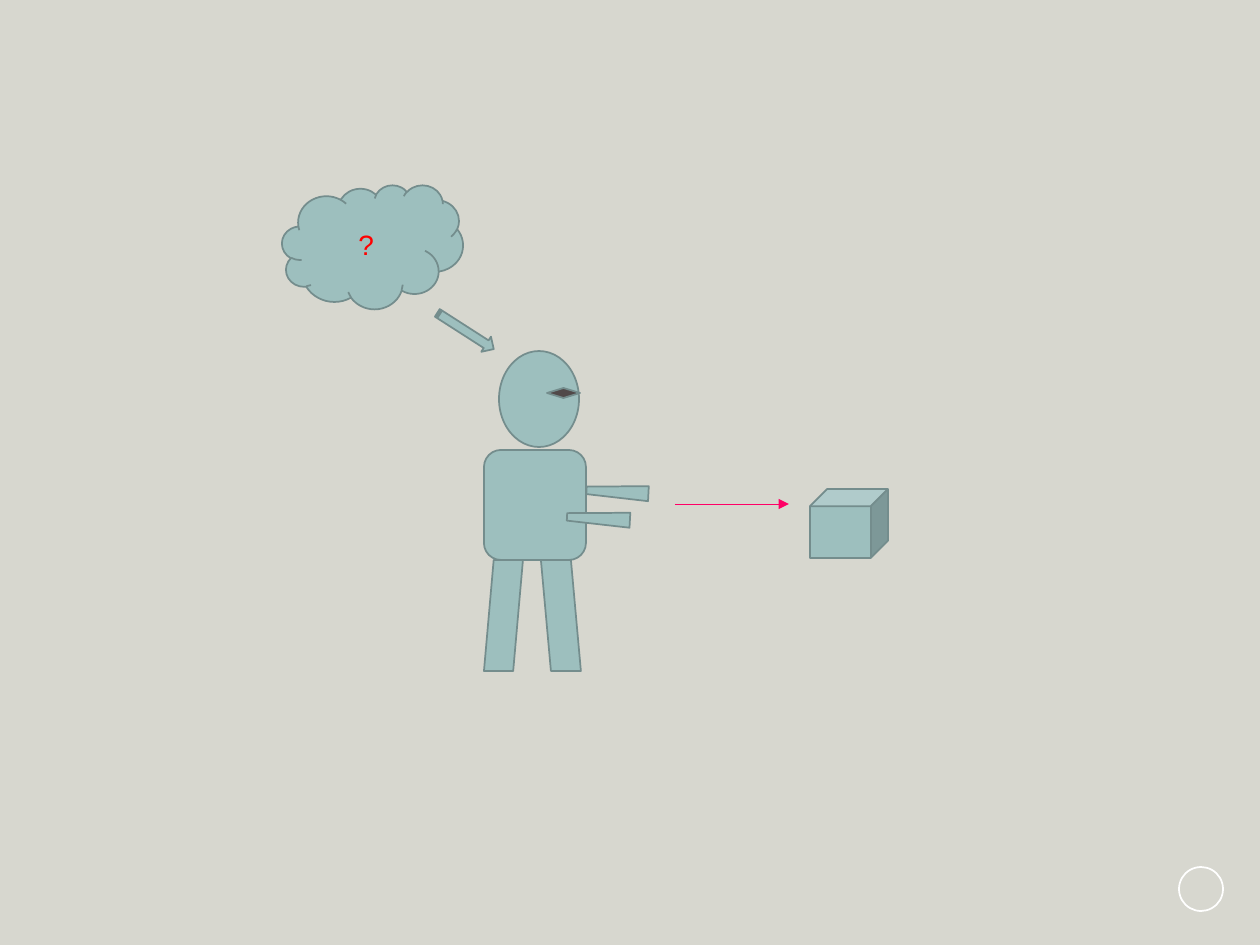
from lxml import etree
from pptx import Presentation
from pptx.dml.color import RGBColor
from pptx.enum.shapes import MSO_CONNECTOR, MSO_SHAPE
from pptx.enum.text import MSO_ANCHOR, PP_ALIGN
from pptx.oxml.ns import qn
from pptx.util import Pt

PX = 914400 / 126
WIDTH, HEIGHT = 1260, 945

BACKGROUND = RGBColor(0xD7, 0xD7, 0xCF)
TEAL = RGBColor(0x9D, 0xBF, 0xBE)
OUTLINE = RGBColor(0x74, 0x8D, 0x8D)
DARK = RGBColor(0x51, 0x49, 0x49)
WHITE = RGBColor(0xFF, 0xFF, 0xFF)
RED = RGBColor(0xFF, 0x00, 0x00)
PINK = RGBColor(0xFF, 0x00, 0x66)

OVAL = MSO_SHAPE.OVAL
ROUNDED = MSO_SHAPE.ROUNDED_RECTANGLE
PARALLELOGRAM = MSO_SHAPE.PARALLELOGRAM
CUBE = MSO_SHAPE.CUBE
DIAMOND = MSO_SHAPE.DIAMOND
CLOUD = MSO_SHAPE.CLOUD
STRIPED_ARROW = MSO_SHAPE.STRIPED_RIGHT_ARROW
TRAPEZOID = MSO_SHAPE.TRAPEZOID
STRAIGHT = MSO_CONNECTOR.STRAIGHT
CENTER = PP_ALIGN.CENTER
MIDDLE = MSO_ANCHOR.MIDDLE

# Content: preset, (left, top, width, height) in px, format; back to front
PAGE_RING = (OVAL, (1179, 867, 44, 44), {"fill": None, "line": WHITE})
PERSON_AND_OBJECT = [
    (OVAL, (499, 351, 80, 96), {}),                        # head
    (ROUNDED, (484, 450, 102, 110), {}),                   # torso
    (PARALLELOGRAM, (484, 560, 39, 111), {}),              # left leg
    (PARALLELOGRAM, (541, 560, 40, 111), {"flip": True}),  # right leg
    (CUBE, (810, 489, 78, 69), {}),                        # object
]
REACH_ARROW = (675, 504, 789, 504)
EYE = (DIAMOND, (547, 388, 33, 10), {"fill": DARK})
THOUGHT = (CLOUD, (282, 185, 181, 124), {})
THOUGHT_TEXT = "?"
THOUGHT_ARROW_AND_ARMS = [
    (STRIPED_ARROW, (432, 322, 67, 18), {"rotation": 32.7}),
    (TRAPEZOID, (610, 461, 15, 62), {"rotation": 273.1}),
    (TRAPEZOID, (591, 487, 15, 63), {"rotation": 273.1}),
]


def px(values):
    return [round(v * PX) for v in values]


def add_shape(s, preset, box, fill=TEAL, line=OUTLINE, rotation=0, flip=False):
    sp = s.shapes.add_shape(preset, *px(box))
    sp.shadow.inherit = False
    if fill is None:
        sp.fill.background()
    else:
        sp.fill.solid()
        sp.fill.fore_color.rgb = fill
    sp.line.color.rgb = line
    sp.line.width = Pt(1)
    sp.rotation = rotation
    if flip:
        sp._element.spPr.xfrm.set("flipH", "1")
    return sp


def add_text(sp, text, size=16, font="Arial", color=RED, align=CENTER, anchor=MIDDLE):
    tf = sp.text_frame
    tf.word_wrap = True
    tf.vertical_anchor = anchor
    p = tf.paragraphs[0]
    p.alignment = align
    r = p.add_run()
    r.text = text
    r.font.size = Pt(size)
    r.font.name = font
    r.font.color.rgb = color


def add_arrow(s, ends, color=PINK, width=0.5):
    c = s.shapes.add_connector(STRAIGHT, *px(ends))
    c.line.color.rgb = color
    c.line.width = Pt(width)
    etree.SubElement(c.line._get_or_add_ln(), qn("a:tailEnd"), type="triangle")
    etree.SubElement(c._element.spPr, qn("a:effectLst"))


def main():
    prs = Presentation()
    prs.slide_width, prs.slide_height = px((WIDTH, HEIGHT))
    s = prs.slides.add_slide(prs.slide_layouts[6])
    s.background.fill.solid()
    s.background.fill.fore_color.rgb = BACKGROUND

    # Page ring, body and object
    for preset, box, style in [PAGE_RING, *PERSON_AND_OBJECT]:
        add_shape(s, preset, box, **style)

    # Arrow from the person to the object
    add_arrow(s, REACH_ARROW)

    # Eye and thought cloud
    preset, box, style = EYE
    add_shape(s, preset, box, **style)
    preset, box, style = THOUGHT
    add_text(add_shape(s, preset, box, **style), THOUGHT_TEXT)

    # Thought arrow and arms
    for preset, box, style in THOUGHT_ARROW_AND_ARMS:
        add_shape(s, preset, box, **style)

    prs.save("out.pptx")


if __name__ == "__main__":
    main()
